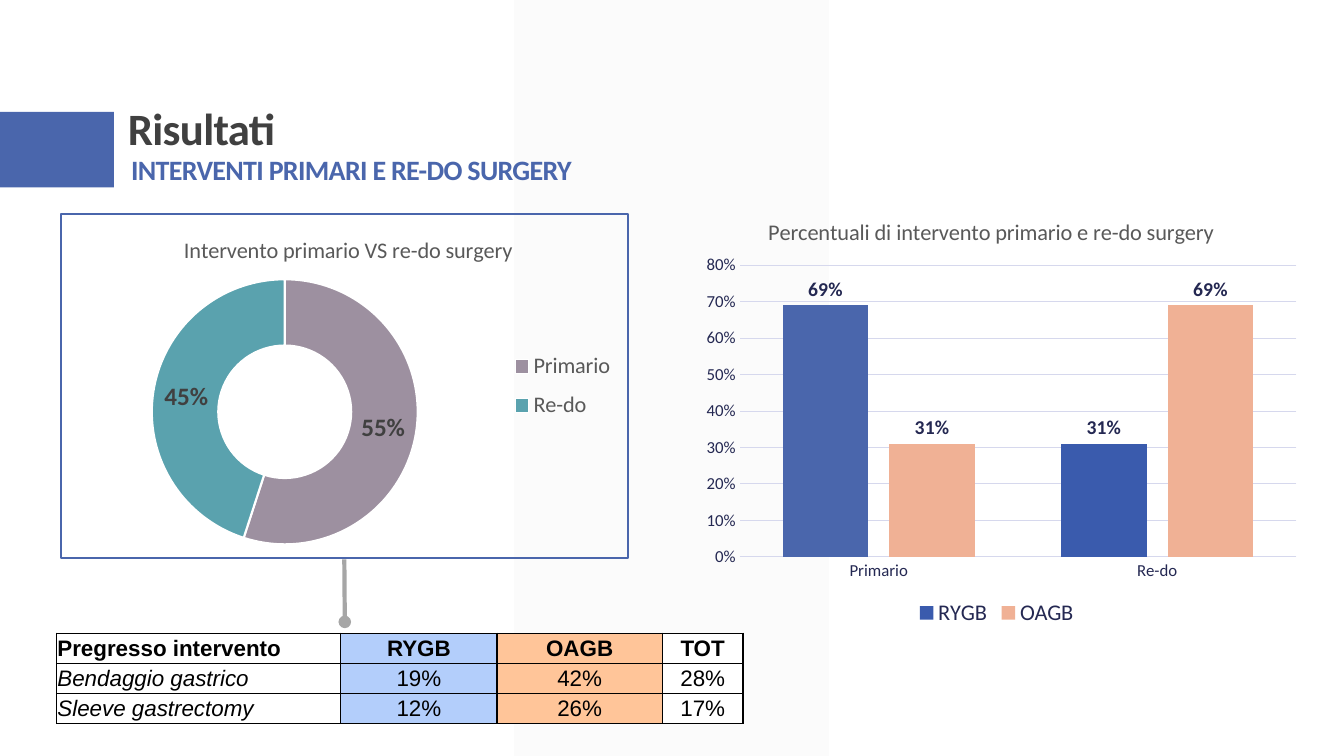
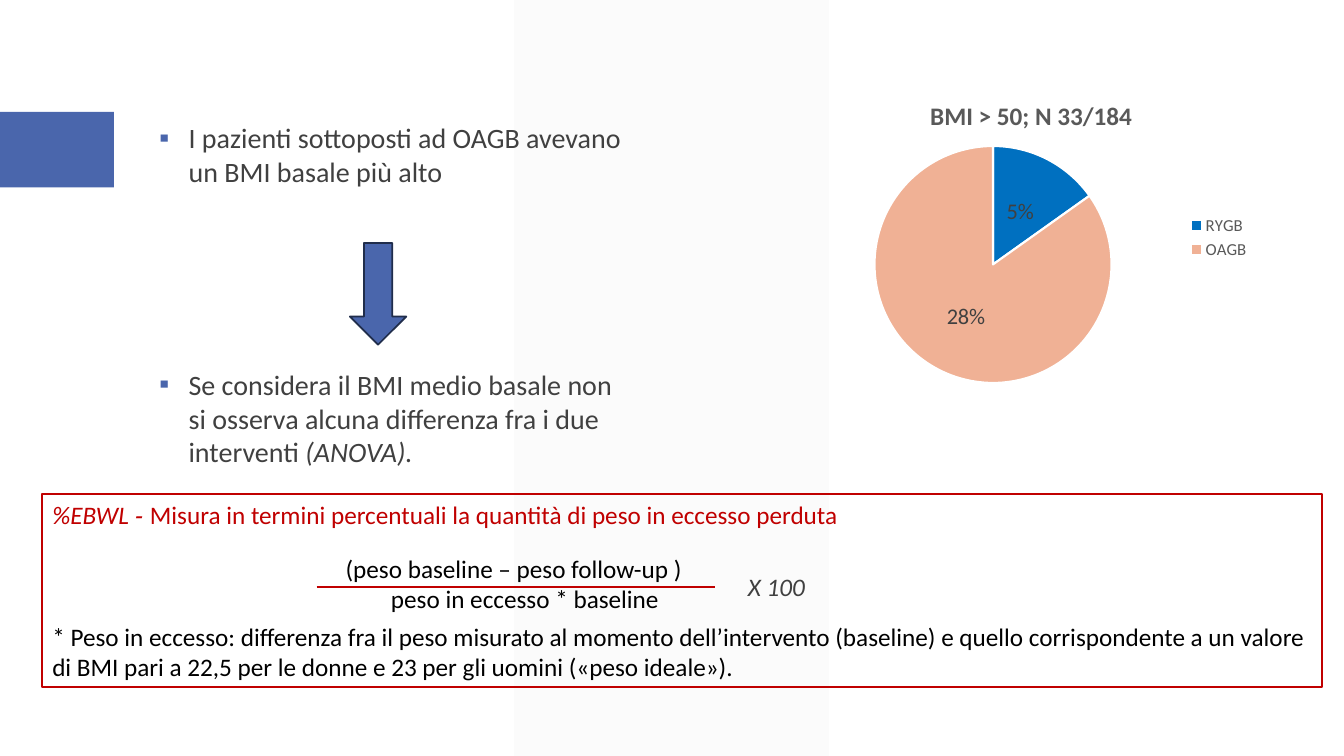
"""Two slides of surgical results: primary and re-do surgery, and baseline BMI."""
from pptx import Presentation
from pptx.chart.data import CategoryChartData
from pptx.dml.color import RGBColor
from pptx.enum.chart import XL_CHART_TYPE as ChartType, XL_LABEL_POSITION as LabelPos
from pptx.enum.chart import XL_LEGEND_POSITION as LegendPos, XL_TICK_MARK as Tick
from pptx.enum.shapes import MSO_CONNECTOR, MSO_SHAPE
from pptx.enum.text import MSO_ANCHOR, MSO_AUTO_SIZE, PP_ALIGN
from pptx.oxml import parse_xml
from pptx.oxml.ns import nsdecls, qn
from pptx.util import Inches, Pt

BLUE = RGBColor(0x4A, 0x66, 0xAC)
DEEP_BLUE = RGBColor(0x3A, 0x5B, 0xAD)
BRIGHT_BLUE = RGBColor(0x00, 0x70, 0xC0)
DARK_EDGE = RGBColor(0x20, 0x2D, 0x4B)
NAVY = RGBColor(0x24, 0x28, 0x52)
LAVENDER = RGBColor(0xD6, 0xD8, 0xED)
MAUVE = RGBColor(0x9D, 0x90, 0xA0)
TEAL = RGBColor(0x5A, 0xA2, 0xAE)
PEACH = RGBColor(0xF0, 0xB1, 0x95)
SKY = RGBColor(0xB3, 0xCE, 0xFB)
APRICOT = RGBColor(0xFF, 0xC5, 0x99)
RED = RGBColor(0xC0, 0x00, 0x00)
INK = RGBColor(0x40, 0x40, 0x40)
GREY = RGBColor(0x59, 0x59, 0x59)
SILVER = RGBColor(0xA6, 0xA6, 0xA6)
PALE = RGBColor(0xF2, 0xF2, 0xF2)
BLACK = RGBColor(0, 0, 0)
WHITE = RGBColor(0xFF, 0xFF, 0xFF)


def write(paragraph, text, size, color, bold=False, italic=False, face="Calibri"):
    run = paragraph.add_run()
    run.text = text
    run.font.name, run.font.size = face, Pt(size)
    run.font.bold, run.font.italic = bold, italic
    run.font.color.rgb = color
    return run


def place(part, index, inner=False, **fractions):
    for old in part.findall(qn("c:layout")):
        part.remove(old)
    target = '<c:layoutTarget val="inner"/>' if inner else ""
    modes = "".join(f'<c:{axis}Mode val="edge"/>' for axis in "xy")
    sizes = "".join(f'<c:{key} val="{value}"/>' for key, value in fractions.items())
    part.insert(index, parse_xml(
        f'<c:layout {nsdecls("c")}><c:manualLayout>{target}{modes}{sizes}'
        "</c:manualLayout></c:layout>"))


prs = Presentation()
prs.slide_width, prs.slide_height = Inches(13.33), Inches(7.5)
results = prs.slides.add_slide(prs.slide_layouts[5])
baseline = prs.slides.add_slide(prs.slide_layouts[1])
baseline.shapes.title.element.getparent().remove(baseline.shapes.title.element)

master_tree = prs.slide_master.element.cSld.spTree
for order, (box, color, opacity) in enumerate([
        ((5.1, 0, 3.12, 7.5), PALE, 30),
        ((0, 1.11, 1.13, 0.75), BLUE, 100)]):
    band = results.shapes.add_shape(MSO_SHAPE.RECTANGLE, *map(Inches, box))
    band.shadow.inherit = False
    band.fill.solid()
    band.fill.fore_color.rgb = color
    band.line.fill.background()
    tint = band.element.spPr.find(f'{qn("a:solidFill")}/{qn("a:srgbClr")}')
    tint.append(parse_xml(f'<a:alpha {nsdecls("a")} val="{opacity * 1000}"/>'))
    band.element.nvSpPr.cNvPr.set("id", str(20 + order))
    master_tree.insert(2 + order, band.element)

subtitle = results.shapes.title
subtitle.left, subtitle.top, subtitle.width, subtitle.height = map(Inches, (1.2, 0.31, 11, 1.59))
heading = results.shapes.add_textbox(*map(Inches, (1.17, 0.99, 2.59, 0.6)))
for holder, text, size, color in [
        (subtitle, "INTERVENTI PRIMARI E RE-DO SURGERY", 20, BLUE),
        (heading, "Risultati", 32, INK)]:
    frame = holder.text_frame
    frame.word_wrap, frame.auto_size = True, MSO_AUTO_SIZE.NONE
    frame.vertical_anchor = MSO_ANCHOR.BOTTOM
    line = frame.paragraphs[0]
    line.alignment, line.line_spacing = PP_ALIGN.LEFT, 0.9
    run = write(line, text, size, color, bold=True)
    run.font.element.set("spc", "-50") if hasattr(run.font, "element") else \
        run._r.get_or_add_rPr().set("spc", "-50")

charts = []
for (slide, kind, box, categories, series, title, title_size, title_bold, title_at, plot_at,
     legend_pos, legend_size, legend_color, label_size, label_color, label_bold, label_pos,
     point_colors) in [
        (results, ChartType.DOUGHNUT, (0.59, 2.11, 5.65, 3.44), ("Primario", "Re-do"),
         {"Series 1": (0.55, 0.45)}, "Intervento primario VS re-do surgery", 16, False,
         (0.21, 0.05), (0.16, 0.19, 0.47, 0.77), LegendPos.RIGHT, 16, GREY,
         18, INK, True, None, [(MAUVE, TEAL)]),
        (results, ChartType.COLUMN_CLUSTERED, (6.85, 1.94, 6.07, 4.32), ("Primario", "Re-do"),
         {"RYGB": (0.69, 0.31), "OAGB": (0.31, 0.69)},
         "Percentuali di intervento primario e re-do surgery", 16, False,
         (0.12, 0.04), (0.08, 0.16, 0.91, 0.67), LegendPos.BOTTOM, 16, NAVY,
         14, NAVY, True, LabelPos.OUTSIDE_END, [(BLUE, DEEP_BLUE), (PEACH, PEACH)]),
        (baseline, ChartType.PIE, (7.89, 0.77, 4.61, 3.17), ("RYGB", "OAGB"),
         {"Series 1": (0.05, 0.28)}, "BMI > 50; N 33/184", 18, True,
         (0.28, 0.05), (0.17, 0.21, 0.51, 0.75), LegendPos.RIGHT, 12, GREY,
         16, INK, False, LabelPos.CENTER, [(BRIGHT_BLUE, PEACH)])]:
    data = CategoryChartData(number_format="0%")
    data.categories = categories
    for name, values in series.items():
        data.add_series(name, values)
    graphic = slide.shapes.add_chart(kind, *map(Inches, box), data)
    chart = graphic.chart
    charts.append(graphic)
    chart.font.name, chart.font.size = "Calibri", Pt(10)
    chart.has_title = True
    write(chart.chart_title.text_frame.paragraphs[0], title, title_size, GREY, title_bold)
    place(chart.chart_title.element, 1, x=title_at[0], y=title_at[1])
    place(chart.element.find(f'{qn("c:chart")}/{qn("c:plotArea")}'), 0, inner=True,
          **dict(zip("xywh", plot_at)))
    chart.has_legend = True
    chart.legend.position = legend_pos
    chart.legend.include_in_layout = False
    chart.legend.font.name, chart.legend.font.size = "Calibri", Pt(legend_size)
    chart.legend.font.color.rgb = legend_color
    plot = chart.plots[0]
    plot.vary_by_categories = len(series) == 1
    plot.has_data_labels = True
    labels = plot.data_labels
    labels.show_value, labels.show_percentage = True, False
    labels.number_format, labels.number_format_is_linked = "0%", False
    labels.font.name, labels.font.size, labels.font.bold = "Calibri", Pt(label_size), label_bold
    labels.font.color.rgb = label_color
    if label_pos is not None:
        labels.position = label_pos
    for drawn, colors in zip(plot.series, point_colors):
        drawn.format.fill.solid()
        drawn.format.fill.fore_color.rgb = colors[-1]
        for index, color in enumerate(colors):
            point = drawn.points[index].format
            point.fill.solid()
            point.fill.fore_color.rgb = color
            if len(series) == 1:
                point.line.color.rgb, point.line.width = WHITE, Pt(1.5)

doughnut, columns, pie = charts
place(doughnut.chart.legend.element if hasattr(doughnut.chart.legend, "element")
      else doughnut.chart.element.find(f'{qn("c:chart")}/{qn("c:legend")}'),
      1, x=0.79, y=0.37, w=0.19, h=0.26)
doughnut.chart.element.find(f'.//{qn("c:holeSize")}').set("val", "75")
doughnut.chart.element.find(qn("c:chart")).addnext(parse_xml(
    f'<c:spPr {nsdecls("c", "a")}><a:noFill/><a:ln w="{Pt(1.75)}"><a:solidFill>'
    f'<a:srgbClr val="{BLUE}"/></a:solidFill></a:ln></c:spPr>'))

bars = columns.chart.plots[0]
bars.gap_width, bars.overlap = 100, -24
shares = columns.chart.value_axis
shares.minimum_scale, shares.maximum_scale, shares.major_unit = 0, 0.8, 0.1
shares.tick_labels.number_format, shares.tick_labels.number_format_is_linked = "0%", False
shares.major_gridlines.format.line.color.rgb = LAVENDER
shares.major_gridlines.format.line.width = Pt(0.75)
shares.format.line.fill.background()
groups = columns.chart.category_axis
groups.format.line.color.rgb, groups.format.line.width = LAVENDER, Pt(0.75)
for axis in (shares, groups):
    axis.major_tick_mark = axis.minor_tick_mark = Tick.NONE
    axis.tick_labels.font.name, axis.tick_labels.font.size = "Calibri", Pt(12)
    axis.tick_labels.font.color.rgb = NAVY

pointer = results.shapes.add_connector(
    MSO_CONNECTOR.STRAIGHT, *map(Inches, (3.42, 6.17, 3.42, 5.56)))
pointer.end_connect(doughnut, 2)
pointer.line.color.rgb, pointer.line.width = SILVER, Pt(3)
pointer.line._get_or_add_ln().append(parse_xml(f'<a:headEnd {nsdecls("a")} type="oval"/>'))

rows = [("Pregresso intervento", "RYGB", "OAGB", "TOT"),
        ("Bendaggio gastrico", "19%", "42%", "28%"),
        ("Sleeve gastrectomy", "12%", "26%", "17%")]
previous = results.shapes.add_table(3, 4, *map(Inches, (0.56, 6.28, 6.81, 0.9))).table
previous.first_row = previous.horz_banding = False
for column, width in zip(previous.columns, (2.82, 1.55, 1.64, 0.8)):
    column.width = Inches(width)
for r, row in enumerate(rows):
    for c, (text, color) in enumerate(zip(row, (WHITE, SKY, APRICOT, WHITE))):
        cell = previous.cell(r, c)
        cell.margin_left = cell.margin_right = cell.margin_top = Inches(0.01)
        cell.margin_bottom = 0
        cell.vertical_anchor = MSO_ANCHOR.MIDDLE
        entry = cell.text_frame.paragraphs[0]
        entry.alignment = PP_ALIGN.CENTER if c else PP_ALIGN.LEFT
        write(entry, text, 16, BLACK, r == 0, r > 0 and c == 0, "Arial")
        for side, weight in zip("LRTB", (1 if c else 0.5, 1, 0.5, 0.5)):
            cell._tc.get_or_add_tcPr().append(parse_xml(
                f'<a:ln{side} {nsdecls("a")} w="{Pt(weight)}"><a:solidFill>'
                f'<a:srgbClr val="{BLACK}"/></a:solidFill></a:ln{side}>'))
        cell.fill.solid()
        cell.fill.fore_color.rgb = color

findings = baseline.placeholders[1]
findings.left, findings.top, findings.width, findings.height = map(
    Inches, (1.58, 1.15, 4.61, 3.57))
frame = findings.text_frame
frame.auto_size = MSO_AUTO_SIZE.NONE
frame.margin_left = frame.margin_right = 0
for index, (gap, runs) in enumerate([
        (0, [("I pazienti sottoposti ad OAGB avevano un BMI basale più alto", False)]),
        (128, [("Se considera il BMI medio basale non si osserva alcuna differenza "
                "fra i due interventi ", False), ("(ANOVA).", True)])]):
    finding = frame.add_paragraph() if index else frame.paragraphs[0]
    finding.space_before, finding.space_after = Pt(gap), Pt(0)
    for text, italic in runs:
        write(finding, text, 20, INK, italic=italic)
    props = finding._p.get_or_add_pPr()
    props.set("marL", str(Inches(0.29)))
    props.set("indent", str(-Inches(0.29)))
    for bullet in (f'<a:buClr {nsdecls("a")}><a:srgbClr val="{BLUE}"/></a:buClr>',
                   f'<a:buFont {nsdecls("a")} typeface="Calibri"/>',
                   f'<a:buChar {nsdecls("a")} char="▪"/>'):
        props.append(parse_xml(bullet))

arrow = baseline.shapes.add_shape(MSO_SHAPE.DOWN_ARROW, *map(Inches, (3.47, 2.41, 0.56, 1.01)))
arrow.shadow.inherit = False
arrow.fill.solid()
arrow.fill.fore_color.rgb = BLUE
arrow.line.color.rgb, arrow.line.width = DARK_EDGE, Pt(1.25)

definition = baseline.shapes.add_shape(MSO_SHAPE.RECTANGLE, *map(Inches, (0.42, 4.9, 12.69, 1.92)))
definition.shadow.inherit = False
definition.fill.background()
definition.line.color.rgb, definition.line.width = RED, Pt(1.5)
frame = definition.text_frame
frame.word_wrap, frame.vertical_anchor = True, MSO_ANCHOR.TOP
meaning = frame.paragraphs[0]
write(meaning, "%EBWL", 18, RED, italic=True)
write(meaning, " - ", 18, RED, italic=True, face="Open Sans")
write(meaning, "Misura in termini percentuali la quantità di peso in eccesso perduta", 18, RED)
footnote = frame.add_paragraph()
footnote.space_before = Pt(66)
write(footnote, "* Peso in eccesso: differenza fra il peso misurato al momento dell’intervento "
      "(baseline) e quello corrispondente a un valore di BMI pari a 22,5 per le donne e 23 per "
      "gli uomini («peso ideale»).", 18, BLACK)
for line in frame.paragraphs:
    line.alignment = PP_ALIGN.LEFT

for box, lines in [
        ((3.33, 5.44, 3.7, 0.71), [("(peso baseline – peso follow-up )", 0, BLACK, False),
                                   ("peso in eccesso * baseline", 0.45, BLACK, False)]),
        ((7.32, 5.62, 0.97, 0.4), [("X 100", 0, INK, True)])]:
    frame = baseline.shapes.add_textbox(*map(Inches, box)).text_frame
    frame.word_wrap = True
    for index, (text, indent, color, italic) in enumerate(lines):
        term = frame.add_paragraph() if index else frame.paragraphs[0]
        term._p.get_or_add_pPr().set("marL", str(Inches(indent)))
        write(term, text, 18, color, italic=italic)

fraction_bar = baseline.shapes.add_connector(
    MSO_CONNECTOR.STRAIGHT, *map(Inches, (3.14, 5.82, 7.09, 5.82)))
fraction_bar.line.color.rgb, fraction_bar.line.width = RED, Pt(1.5)
for rule in (pointer, fraction_bar):
    rule.element.spPr.append(parse_xml(f'<a:effectLst {nsdecls("a")}/>'))

prs.save("out.pptx")
